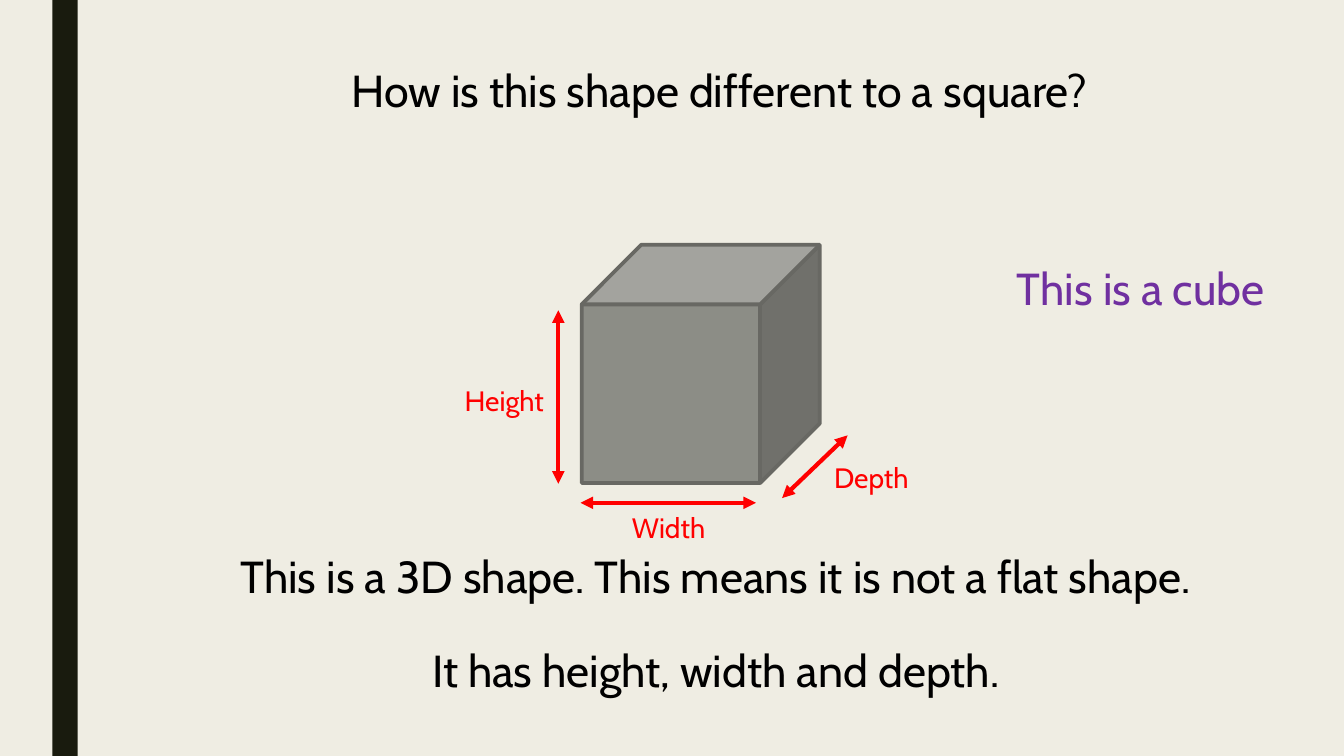
from dataclasses import dataclass

from lxml import etree
from pptx import Presentation
from pptx import util as u
from pptx.dml.color import RGBColor
from pptx.enum import shapes, text
from pptx.oxml import ns


@dataclass(frozen=True)
class Theme:
    """Colours, font and type sizes of the lesson."""
    background: str = "EFEDE3"
    bar: str = "191B0E"
    cube: str = "8C8D86"
    cube_edge: str = "686863"
    body: str = "000000"
    dimension: str = "FF0000"
    answer: str = "7030A0"
    font: str = "Cabin"
    body_size: int = 32
    label_size: int = 20
    edge_width: float = 2.75
    arrow_width: float = 3


class LessonSlide:
    """Draws styled elements on one slide, measured in centimetres."""

    def __init__(self, presentation, theme):
        self.theme = theme
        self.slide = presentation.slides.add_slide(presentation.slide_layouts[6])
        fill = self.slide.background.fill
        fill.solid()
        fill.fore_color.rgb = RGBColor.from_string(theme.background)

    def solid(self, kind, left, top, width, height, color, edge=None):
        """Add a filled preset shape with an optional edge."""
        shape = self.slide.shapes.add_shape(
            kind, u.Cm(left), u.Cm(top), u.Cm(width), u.Cm(height))
        shape.shadow.inherit = False
        shape.fill.solid()
        shape.fill.fore_color.rgb = RGBColor.from_string(color)
        if edge:
            shape.line.color.rgb = RGBColor.from_string(edge)
            shape.line.width = u.Pt(self.theme.edge_width)
        else:
            shape.line.fill.background()

    def words(self, content, left, top, width, height, size, color):
        """Add a centred line of text."""
        box = self.slide.shapes.add_textbox(
            u.Cm(left), u.Cm(top), u.Cm(width), u.Cm(height))
        frame = box.text_frame
        frame.word_wrap = True
        frame.auto_size = text.MSO_AUTO_SIZE.SHAPE_TO_FIT_TEXT
        frame.text = content
        paragraph = frame.paragraphs[0]
        paragraph.alignment = text.PP_ALIGN.CENTER
        font = paragraph.runs[0].font
        font.name = self.theme.font
        font.size = u.Pt(size)
        font.color.rgb = RGBColor.from_string(color)

    def sentence(self, content, left, top, width, color):
        """Add a sentence in the large type size."""
        self.words(content, left, top, width, 1.63, self.theme.body_size, color)

    def dimension(self, name, label_at, start, end):
        """Add a double-headed arrow and its label."""
        arrow = self.slide.shapes.add_connector(
            shapes.MSO_CONNECTOR.STRAIGHT, *(u.Cm(value) for value in start + end))
        arrow.line.color.rgb = RGBColor.from_string(self.theme.dimension)
        arrow.line.width = u.Pt(self.theme.arrow_width)
        properties = arrow.element.spPr
        outline = properties.find(ns.qn("a:ln"))
        for tag in ("a:headEnd", "a:tailEnd"):
            etree.SubElement(outline, ns.qn(tag), type="triangle")
        etree.SubElement(properties, ns.qn("a:effectLst"))
        self.words(name, *label_at, 2.62, 1.12,
                   self.theme.label_size, self.theme.dimension)


def main():
    """Build the cube slide and save it."""
    theme = Theme()
    presentation = Presentation()
    presentation.slide_width = u.Cm(33.87)
    presentation.slide_height = u.Cm(19.05)
    lesson = LessonSlide(presentation, theme)

    lesson.solid(shapes.MSO_SHAPE.RECTANGLE, 1.32, 0, 0.64, 19.05, theme.bar)
    lesson.solid(shapes.MSO_SHAPE.CUBE, 14.66, 6.17, 6, 6, theme.cube, theme.cube_edge)

    lesson.sentence("How is this shape different to a square? ",
                    8.33, 1.45, 19.86, theme.body)
    lesson.sentence("This is a 3D shape. This means it is not a flat shape. ",
                    3.58, 13.69, 29.18, theme.body)
    lesson.sentence("It has height, width and depth. ", 3.58, 16.08, 29.18, theme.body)

    lesson.dimension("Height", (11.4, 9.53), (14.07, 7.82), (14.07, 12.19))
    lesson.dimension("Width", (15.54, 12.75), (19.05, 12.67), (14.63, 12.67))
    lesson.dimension("Depth", (20.65, 11.48), (21.36, 10.97), (19.71, 12.55))
    lesson.sentence("This is a cube", 25.04, 6.45, 7.42, theme.answer)

    presentation.save("out.pptx")


if __name__ == "__main__":
    main()
